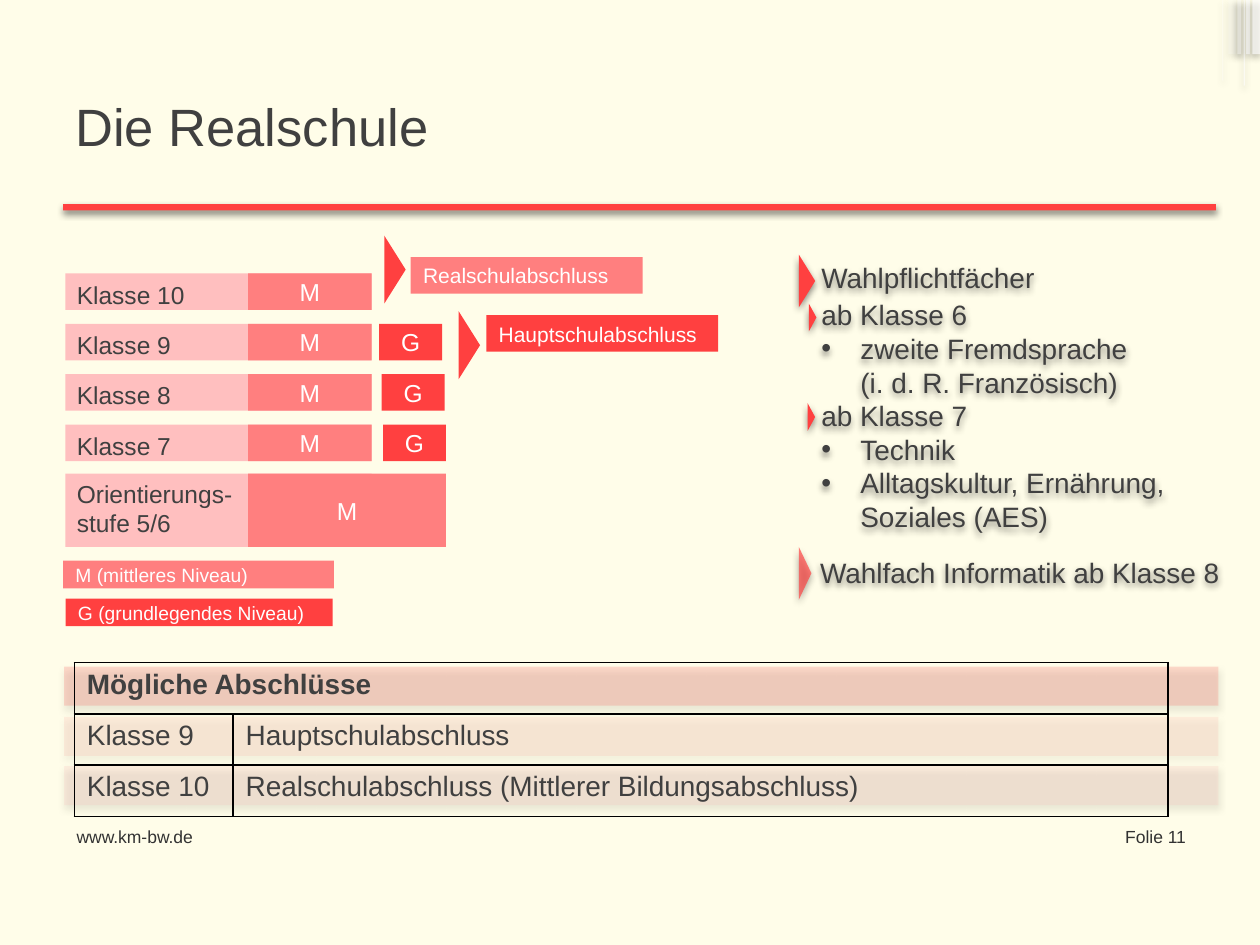
from lxml import etree
from pptx import Presentation
from pptx.dml.color import RGBColor
from pptx.enum.shapes import MSO_SHAPE
from pptx.enum.text import MSO_ANCHOR, PP_ALIGN
from pptx.oxml.ns import qn
from pptx.util import Inches, Pt

RECTANGLE, ARROW = MSO_SHAPE.RECTANGLE, MSO_SHAPE.PENTAGON
TOP, MIDDLE = MSO_ANCHOR.TOP, MSO_ANCHOR.MIDDLE
LEFT, CENTER, RIGHT = PP_ALIGN.LEFT, PP_ALIGN.CENTER, PP_ALIGN.RIGHT

THEME = {
    "font": "Arial", "background": "FFFDE9", "text": "404040", "footer": "323232",
    "white": "FFFFFF", "legend": "FEFEFE", "black": "000000",
    "red": "FF4040", "medium": "FF7F7F", "light": "FFBFBF",
    "title_size": 30, "body_size": 16, "level_size": 14, "badge_size": 12,
    "legend_size": 11, "footer_size": 10,
}

TITLE = "Die Realschule"
FOOTERS = [("www.km-bw.de", 0.51, 1.33, LEFT), ("Folie 11", 8.54, 0.97, RIGHT)]
# Label and left edge of the G box, where the class has one
CLASSES = [("Klasse 10", None), ("Klasse 9", 3.01), ("Klasse 8", 3.03), ("Klasse 7", 3.04)]
ORIENTATION = "Orientierungs-\nstufe 5/6"
DEGREES = [("Realschulabschluss", 3.26, 2.04, "medium", MIDDLE),
           ("Hauptschulabschluss", 3.86, 2.5, "red", TOP)]
LEGEND = [("M (mittleres Niveau)", 0.5, 4.45, 2.15, "medium"),
          ("G (grundlegendes Niveau)", 0.52, 4.75, 2.12, "red")]
ELECTIVES = [  # text, bulleted
    ("Wahlpflichtfächer", False),
    ("ab Klasse 6", False),
    ("zweite Fremdsprache \n(i. d. R. Französisch)", True),
    ("ab Klasse 7", False),
    ("Technik", True),
    ("Alltagskultur, Ernährung, \nSoziales (AES)", True),
]
OPTIONAL = "Wahlfach Informatik ab Klasse 8"
TABLE_TITLE = "Mögliche Abschlüsse"
TABLE_ROWS = [("Klasse 9", "Hauptschulabschluss"),
              ("Klasse 10", "Realschulabschluss (Mittlerer Bildungsabschluss)")]
COLUMN_WIDTHS = [1.26, 7.42]
BANDS = [("FF4040", 5.29, 18), ("FF6D6D", 5.69, 10), ("FFB6B6", 6.08, 18)]
CORNER_STRIPS = [  # left, width, height, opacity
    (9.89, 0.03, 0.43, 65), (9.94, 0.06, 0.43, 65), (9.7, 0.01, 0.64, 30),
    (9.87, 0.01, 0.68, 60), (9.75, 0.06, 0.43, 20), (9.82, 0.03, 0.43, 40),
]
DEGREE_ARROWS = [(3.05, 1.87, 0.17, 0.54), (3.64, 2.47, 0.17, 0.54)]
TOPIC_ARROWS = [(6.34, 2.02, 0.13, 0.42, 100), (6.42, 2.41, 0.06, 0.22, 100),
                (6.41, 3.2, 0.06, 0.22, 100), (6.34, 4.34, 0.1, 0.42, 68)]

ROW_TOP, ROW_PITCH, ROW_HEIGHT = 2.17, 0.4, 0.29
ORIENTATION_TOP, ORIENTATION_HEIGHT = 3.76, 0.58
BAR_LEFT, LEVEL_LEFT, LABEL_LEFT = 0.52, 1.97, 0.61
LABEL_WIDTH = 1.3


def color(name):
    return RGBColor.from_string(THEME.get(name, name))


def add_child(parent, tag, **attributes):
    return etree.SubElement(parent, qn(tag), {key: str(value) for key, value in attributes.items()})


def write(frame, text, size, fill="text", bold=False, align=LEFT, anchor=TOP,
          inset=(0.1, 0.05)):
    """Fill a text frame; text is a string or a list of (text, bulleted) paragraphs."""
    frame.word_wrap = True
    frame.vertical_anchor = anchor
    frame.margin_left = frame.margin_right = Inches(inset[0])
    frame.margin_top = frame.margin_bottom = Inches(inset[1])
    paragraphs = [(text, False)] if isinstance(text, str) else text
    for index, (content, bulleted) in enumerate(paragraphs):
        paragraph = frame.paragraphs[0] if index == 0 else frame.add_paragraph()
        paragraph.text = content
        paragraph.alignment = align
        if bulleted:
            properties = paragraph._p.get_or_add_pPr()
            properties.set("marL", str(Inches(0.31)))
            properties.set("indent", str(-Inches(0.31)))
            add_child(add_child(properties, "a:buClr"), "a:srgbClr", val=THEME["text"])
            add_child(properties, "a:buFont", typeface=THEME["font"])
            add_child(properties, "a:buChar", char="•")
        for line_break in paragraph._p.findall(qn("a:br")):
            add_child(line_break, "a:rPr", sz=size * 100)
        for run in paragraph.runs:
            run.font.name = THEME["font"]
            run.font.size = Pt(size)
            run.font.bold = bold
            run.font.color.rgb = color(fill)


def add_shadow(shape, opacity):
    shadow = add_child(shape._element.spPr.find(qn("a:effectLst")), "a:outerShdw",
                       blurRad=Pt(4), dist=Pt(2), dir=5400000, algn="ctr", rotWithShape=0)
    shadow_color = add_child(shadow, "a:srgbClr", val=THEME["black"])
    add_child(shadow_color, "a:alpha", val=opacity * 1000)


def add_box(slide, left, top, width, height, fill=None, kind=RECTANGLE, opacity=100, shadow=0):
    shape = slide.shapes.add_shape(kind, Inches(left), Inches(top), Inches(width), Inches(height))
    shape.line.fill.background()
    shape.shadow.inherit = False
    if kind == ARROW:
        shape.adjustments[0] = 1
    if fill:
        shape.fill.solid()
        shape.fill.fore_color.rgb = color(fill)
        if opacity < 100:
            fill_color = shape._element.spPr.find(qn("a:solidFill"))[0]
            add_child(fill_color, "a:alpha", val=opacity * 1000)
    else:
        shape.fill.background()
    if shadow:
        add_shadow(shape, shadow)
    return shape


def add_text(slide, text, left, top, width, height, size, **text_format):
    box = slide.shapes.add_textbox(Inches(left), Inches(top), Inches(width), Inches(height))
    write(box.text_frame, text, size, **text_format)


def add_level(slide, letter, left, top, width, height):
    box = add_box(slide, left, top, width, height, "medium" if letter == "M" else "red")
    write(box.text_frame, letter, THEME["level_size"], fill="white", align=CENTER, anchor=MIDDLE)


def add_class_label(slide, text, top, height):
    add_text(slide, text, LABEL_LEFT, top, LABEL_WIDTH, height, THEME["level_size"], inset=(0, 0))


def add_classes(slide):
    for index, (label, basic_left) in enumerate(CLASSES):
        top = ROW_TOP + index * ROW_PITCH
        add_box(slide, BAR_LEFT, top, 2.43, ROW_HEIGHT, "light")
        add_class_label(slide, label, top + 0.05, 0.23)
        add_level(slide, "M", LEVEL_LEFT, top, 0.98, ROW_HEIGHT)
        if basic_left:
            add_level(slide, "G", basic_left, top, 0.5, ROW_HEIGHT)
    add_box(slide, BAR_LEFT, ORIENTATION_TOP, 2.43, ORIENTATION_HEIGHT, "light")
    add_class_label(slide, ORIENTATION, ORIENTATION_TOP + 0.04, 0.46)
    add_level(slide, "M", LEVEL_LEFT, ORIENTATION_TOP, 1.57, ORIENTATION_HEIGHT)


def add_border(cell):
    properties = cell._tc.get_or_add_tcPr()
    for index, side in enumerate(("a:lnL", "a:lnR", "a:lnT", "a:lnB")):
        line = etree.Element(qn(side), {"w": str(Pt(1))})
        add_child(add_child(line, "a:solidFill"), "a:srgbClr", val=THEME["black"])
        properties.insert(index, line)


def add_degree_table(slide):
    rows = [(TABLE_TITLE, "")] + TABLE_ROWS
    table = slide.shapes.add_table(len(rows), len(COLUMN_WIDTHS), Inches(0.59), Inches(5.26),
                                   Inches(sum(COLUMN_WIDTHS)), Inches(1.22)).table
    table.first_row = table.horz_banding = False
    for column, width in zip(table.columns, COLUMN_WIDTHS):
        column.width = Inches(width)
    table.cell(0, 0).merge(table.cell(0, 1))
    for row_index, row in enumerate(rows):
        for column_index, text in enumerate(row):
            cell = table.cell(row_index, column_index)
            cell.fill.background()
            add_border(cell)
            if text:
                write(cell.text_frame, text, THEME["body_size"], bold=row_index == 0)


def add_topics(slide):
    optional = add_box(slide, 6.41, 4.36, 3.71, 1.65, shadow=45)
    write(optional.text_frame, OPTIONAL, THEME["body_size"])
    electives = add_box(slide, 6.42, 2.02, 3.52, 2.26, shadow=45)
    write(electives.text_frame, ELECTIVES, THEME["body_size"], anchor=MIDDLE)
    electives.text_frame.paragraphs[1].space_before = Pt(2)
    for left, top, width, height, opacity in TOPIC_ARROWS:
        add_box(slide, left, top, width, height, "red", ARROW, opacity, shadow=45)


def main():
    presentation = Presentation()
    presentation.slide_width, presentation.slide_height = Inches(10), Inches(7.5)
    slide = presentation.slides.add_slide(presentation.slide_layouts[6])
    slide.background.fill.solid()
    slide.background.fill.fore_color.rgb = color("background")

    for left, width, height, opacity in CORNER_STRIPS:
        add_box(slide, left, 0, width, height, "white", opacity=opacity, shadow=40)
    for fill, top, opacity in BANDS:
        add_box(slide, 0.51, top, 9.16, 0.31, fill, opacity=opacity, shadow=45)
    for text, left, width, align in FOOTERS:
        add_text(slide, text, left, 6.51, width, 0.39, THEME["footer_size"],
                 fill="footer", align=align)
    add_degree_table(slide)
    add_classes(slide)
    for text, left, top, fill, anchor in DEGREES:
        box = add_box(slide, left, top, 1.84, ROW_HEIGHT, fill)
        write(box.text_frame, text, THEME["badge_size"], fill="white", anchor=anchor)
    for arrow in DEGREE_ARROWS:
        add_box(slide, *arrow, "red", ARROW)
    for text, left, top, width, fill in LEGEND:
        box = add_box(slide, left, top, width, 0.22, fill)
        write(box.text_frame, text, THEME["legend_size"], fill="legend", anchor=MIDDLE)
    add_topics(slide)
    add_text(slide, TITLE, 0.5, 0.61, 9, 0.77, THEME["title_size"], anchor=MIDDLE)
    add_box(slide, 0.5, 1.62, 9.15, 0.05, "red", shadow=45)
    presentation.save("out.pptx")


if __name__ == "__main__":
    main()
